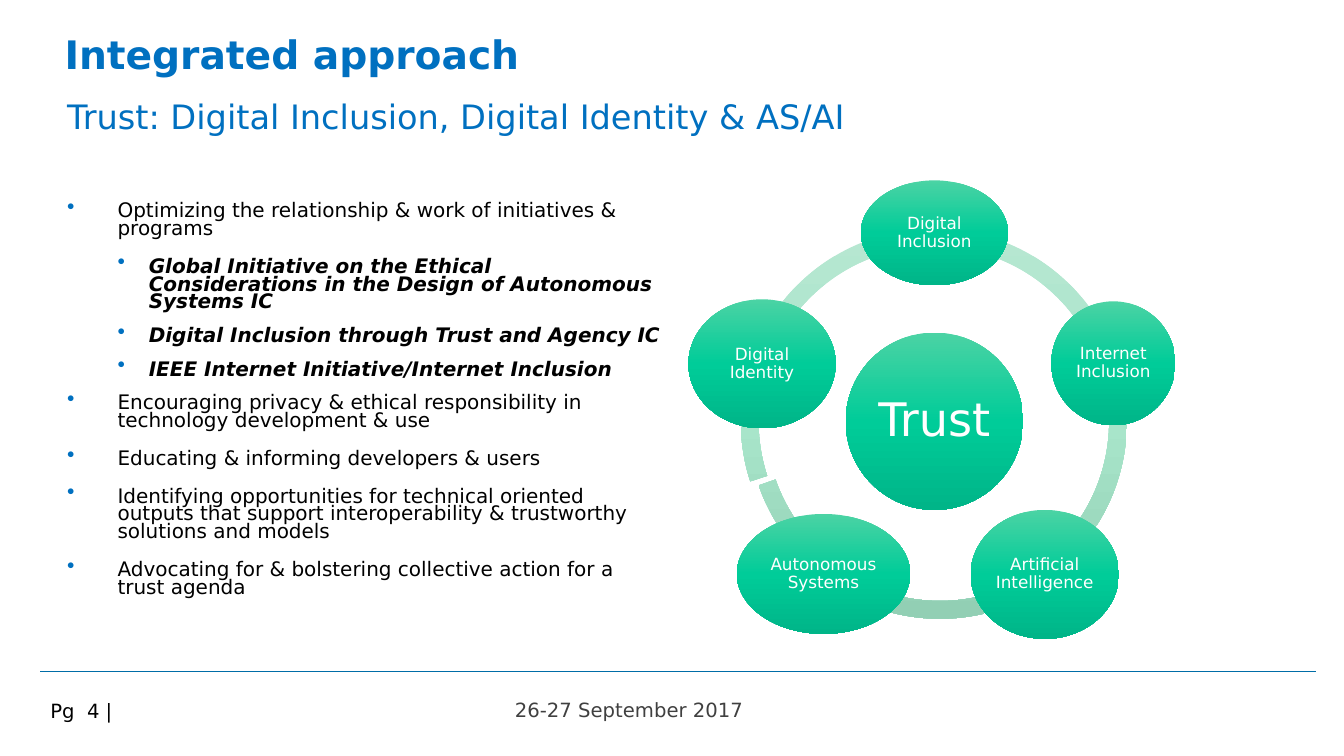
from copy import deepcopy

from lxml import etree
from pptx import Presentation
from pptx import util as u
from pptx.dml.color import RGBColor
from pptx.enum import shapes, text
from pptx.oxml.ns import qn

COLUMNS = 40  # square grid cells across the slide
FONT = "DejaVu Sans"
COLORS = {"blue": "0070C0", "rule": "006DA7", "black": "000000",
          "grey": "404040", "white": "FFFFFF"}
GRADIENTS = {"ring": ("B6E7D1", "A8E5CA", "92CFB4"),
             "node": ("4BD3A4", "00CC99", "00B588")}
BULLETS = [
    (0, "Optimizing the relationship & work of initiatives & programs"),
    (1, "Global Initiative on the Ethical Considerations in the Design of Autonomous Systems IC"),
    (1, "Digital Inclusion through Trust and Agency IC"),
    (1, "IEEE Internet Initiative/Internet Inclusion"),
    (0, "Encouraging privacy & ethical responsibility in technology development & use"),
    (0, "Educating & informing developers & users"),
    (0, "Identifying opportunities for technical oriented outputs that support "
        "interoperability & trustworthy solutions and models"),
    (0, "Advocating for & bolstering collective action for a trust agenda"),
]
LEVELS = [
    {"left": 0.5, "hang": 0.5, "after": 14.2, "emphasis": False},
    {"left": 0.81, "hang": 0.31, "after": 11.4, "emphasis": True},
]
RING_SIZE = 11.49
# left, top, start angle, end angle
ARCS = [
    (1.77, 1.44, 118.65, 160.71),
    (1.74, 1.56, 76.88, 119.49),
    (1.56, 1.44, 32.4, 75.6),
    (1.56, 1.44, 205.2, 32.4),
    (1.56, 1.44, 162, 205.2),
]
# label, text size, left, top, width, height
NODES = [
    ("Trust", 33, 4.68, 4.53, 5.28, 5.28),
    ("Digital Inclusion", 12, 5.13, 0, 4.38, 3.12),
    ("Internet Inclusion", 12, 10.8, 3.6, 3.69, 3.69),
    ("Artificial Intelligence", 12, 8.4, 9.81, 4.41, 3.84),
    ("Autonomous Systems", 12, 1.44, 9.93, 5.16, 3.57),
    ("Digital Identity", 12, 0, 3.54, 4.38, 3.84),
]


def rgb(name):
    return RGBColor.from_string(COLORS[name])


def cells(*counts):
    """Turn counts of grid cells into slide lengths."""
    return [u.Inches(count * 13.33 / COLUMNS) for count in counts]


def set_all(target, **values):
    for name, value in values.items():
        setattr(target, name, value)


def set_insets(frame, left, top, right, bottom):
    set_all(frame, margin_left=u.Inches(left), margin_top=u.Inches(top),
            margin_right=u.Inches(right), margin_bottom=u.Inches(bottom))


def write(para, words, size, color, bold=False, italic=False, **layout):
    span = para.add_run()
    span.text = words
    set_all(span.font, name=FONT, size=u.Pt(size), bold=bold, italic=italic)
    span.font.color.rgb = rgb(color)
    set_all(para, **layout)


def add_text_frame(page, box, insets=(0, 0.02, 0, 0)):
    frame = page.shapes.add_textbox(*cells(*box)).text_frame
    frame.word_wrap = True
    set_insets(frame, *insets)
    return frame


def add_bullet(para, left, hang):
    properties = para._p.get_or_add_pPr()
    properties.set("marL", str(u.Inches(left)))
    properties.set("indent", str(-u.Inches(hang)))
    color = etree.SubElement(properties, qn("a:buClr"))
    etree.SubElement(color, qn("a:srgbClr"), val=COLORS["blue"])
    etree.SubElement(properties, qn("a:buSzPct"), val="110000")
    etree.SubElement(properties, qn("a:buChar"), char="•")


def add_gradient_shape(page, kind, box, gradient):
    shape = page.shapes.add_shape(kind, *cells(*box))
    shape.shadow.inherit = False
    shape.line.fill.background()
    shape.fill.gradient()
    stop_list = shape._element.spPr.find(".//" + qn("a:gsLst"))
    stop_list.append(deepcopy(stop_list[-1]))
    for index, stop in enumerate(shape.fill.gradient_stops):
        stop.color.rgb = RGBColor.from_string(GRADIENTS[gradient][index])
        stop.position = index / 2
    shape.fill.gradient_angle = 270
    return shape


def add_heading(page, left, top):
    title = add_text_frame(page, (left + 0.08, top - 0.06, 35.97, 3.75), (0, 0.42, 0, 0))
    title.vertical_anchor = text.MSO_ANCHOR.MIDDLE
    write(title.paragraphs[0], "Trust: Digital Inclusion, Digital Identity & AS/AI",
          24, "blue", line_spacing=1.08)
    heading = add_text_frame(page, (left, top, 34.5, 1.17))
    write(heading.paragraphs[0], "Integrated approach", 28, "blue", bold=True,
          line_spacing=0.94)


def add_bullets(page, box):
    frame = add_text_frame(page, box)
    for index, (level, words) in enumerate(BULLETS):
        style = LEVELS[level]
        para = frame.add_paragraph() if index else frame.paragraphs[0]
        add_bullet(para, style["left"], style["hang"])
        write(para, words, 14.3, "black", style["emphasis"], style["emphasis"],
              level=level, line_spacing=0.74, space_after=u.Pt(style["after"]))


def add_trust_ring(page, left, top):
    for x, y, start, end in ARCS:
        arc = add_gradient_shape(page, shapes.MSO_SHAPE.BLOCK_ARC,
                                 (left + x, top + y, RING_SIZE, RING_SIZE), "ring")
        for index, value in enumerate((start * 0.6, end * 0.6, 0.046)):
            arc.adjustments[index] = value
    for label, size, x, y, width, height in NODES:
        node = add_gradient_shape(page, shapes.MSO_SHAPE.OVAL,
                                  (left + x, top + y, width, height), "node")
        frame = node.text_frame
        set_all(frame, word_wrap=True, vertical_anchor=text.MSO_ANCHOR.MIDDLE)
        set_insets(frame, *[0.02] * 4)
        write(frame.paragraphs[0], label, size, "white",
              alignment=text.PP_ALIGN.CENTER, line_spacing=0.9)


def add_footer(page, left, top, width):
    rule = page.shapes.add_connector(shapes.MSO_CONNECTOR.STRAIGHT,
                                     *cells(left, top, left + width, top))
    rule.line.color.rgb = rgb("rule")
    rule.line.width = u.Pt(0.75)
    etree.SubElement(rule._element.spPr, qn("a:effectLst"))
    insets = (0.1, 0.05, 0.1, 0.05)
    date = add_text_frame(page, (left + 13.83, top + 0.66, 11.58, 1.02), insets)
    write(date.paragraphs[0], "26-27 September 2017", 14, "grey")
    number = add_text_frame(page, (left, top + 0.75, 8.28, 1.17), insets)
    write(number.paragraphs[0], "Pg  4 |", 14, "black", line_spacing=0.93)


def main():
    deck = Presentation()
    set_all(deck, slide_width=u.Inches(13.33), slide_height=u.Inches(7.5))
    page = deck.slides.add_slide(deck.slide_layouts[6])
    add_footer(page, 1.2, 19.98, 37.98)
    add_heading(page, 1.92, 0.96)
    add_bullets(page, (2, 6, 17.73, 13.2))
    add_trust_ring(page, 20.49, 5.37)
    deck.save("out.pptx")


if __name__ == "__main__":
    main()
